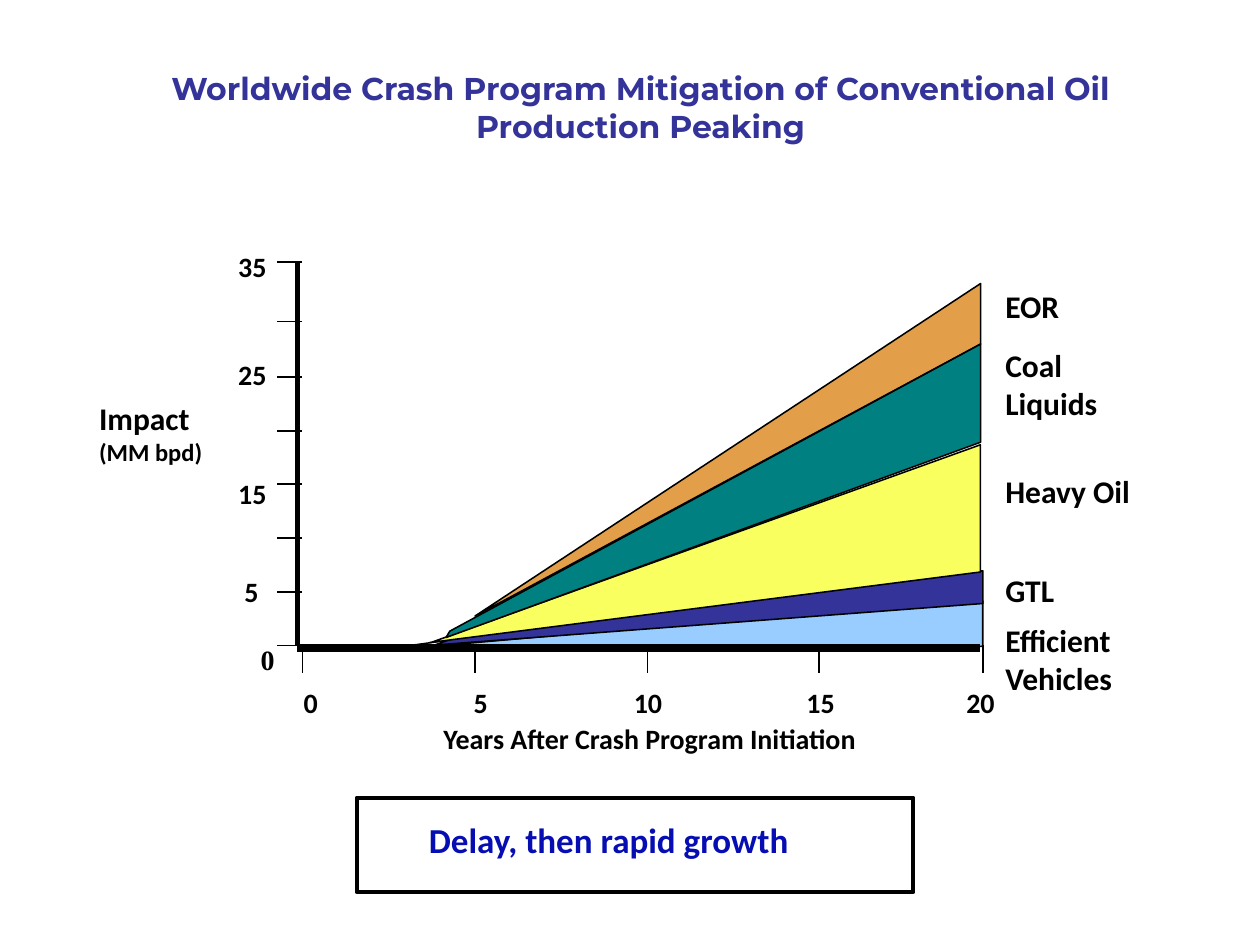
from lxml import etree
from pptx import Presentation
from pptx.dml.color import RGBColor
from pptx.enum.shapes import MSO_CONNECTOR, MSO_SHAPE
from pptx.enum.text import PP_ALIGN
from pptx.oxml.ns import qn
from pptx.util import Pt

STRAIGHT = MSO_CONNECTOR.STRAIGHT
RECTANGLE = MSO_SHAPE.RECTANGLE
LEFT, CENTER = PP_ALIGN.LEFT, PP_ALIGN.CENTER

BLACK = "000000"
THIN = 0.88

YEARS = [("0", 172.8, 173.5), ("5", 271.4, 270.7), ("10", 370, 362.2),
         ("15", 468, 460.8), ("20", 561.6, 552.2)]
IMPACT_TICKS = [368.9, 338.4, 307.4, 276.6, 246.2, 215.3, 183.6, 149.8]
IMPACT_LABELS = [("35", 136.1, 142.6), ("25", 136.1, 204.5),
                 ("15", 136.1, 272.2), ("5", 139.7, 328.3)]

VEHICLES_AREA = [(256.3, 369.4), (561.6, 369.4), (561.6, 343.4),
                 (320.4, 362.9), (247, 369.4)]
GTL_AREA = [(258.5, 365), (561.6, 326.2), (561.6, 344.9), (248.4, 368.6)]
HEAVY_OIL_AREA = [(246.2, 367.2), (560.2, 254.2), (560.2, 326.9), (245.5, 367.2)]
EOR_AREA = [(271.4, 352.1), (560.4, 162), (560.4, 196.6)]
COAL_AREA = [(254.9, 364.3), (560.4, 252.7), (560.4, 196.6), (257, 360.7)]

SERIES_LABELS = [("EOR", 160.6, 28.8), ("Coal Liquids", 194.4, 50.4),
                 ("Heavy Oil", 266.4, 50.4), ("GTL", 322.6, 28.8),
                 ("Efficient Vehicles", 351.4, 50.4)]


def color(code):
    return RGBColor.from_string(code)


def add_line(slide, start, end, width=THIN):
    line = slide.shapes.add_connector(
        STRAIGHT, *(Pt(value) for value in (*start, *end)))
    line.line.color.rgb = color(BLACK)
    line.line.width = Pt(width)
    etree.SubElement(line._element.spPr, qn("a:effectLst"))


def add_area(slide, points, fill):
    corners = [(Pt(x), Pt(y)) for x, y in points]
    builder = slide.shapes.build_freeform(*corners[0])
    builder.add_line_segments(corners[1:], close=True)
    area = builder.convert_to_shape()
    area.shadow.inherit = False
    area.fill.solid()
    area.fill.fore_color.rgb = color(fill)
    area.line.color.rgb = color(BLACK)
    area.line.width = Pt(THIN)


def add_text(slide, lines, box, font="Calibri", ink=BLACK, align=LEFT,
             inset=True, wrap=True):
    frame = slide.shapes.add_textbox(*(Pt(value) for value in box)).text_frame
    frame.word_wrap = wrap
    if not inset:
        frame.margin_left = frame.margin_right = 0
        frame.margin_top = frame.margin_bottom = 0
    for index, (text, size) in enumerate(lines):
        paragraph = frame.add_paragraph() if index else frame.paragraphs[0]
        paragraph.text = text
        paragraph.alignment = align
        paragraph.font.name = font
        paragraph.font.size = Pt(size)
        paragraph.font.bold = True
        paragraph.font.color.rgb = color(ink)


def add_axis_label(slide, text, left, top, font="Calibri"):
    add_text(slide, [(text, 16)], (left, top, 9 * len(text), 19.4), font,
             inset=False, wrap=False)


def add_frame(slide, box):
    frame = slide.shapes.add_shape(RECTANGLE, *(Pt(value) for value in box))
    frame.shadow.inherit = False
    frame.fill.background()
    frame.line.color.rgb = color(BLACK)
    frame.line.width = Pt(2.25)


def add_axes(slide):
    for year, tick, label in YEARS:
        add_line(slide, (tick, 368.6), (tick, 384.5))
        add_axis_label(slide, year, label, 391.7)
    for tick in IMPACT_TICKS:
        add_line(slide, (158.4, tick), (172.8, tick))
    for impact, left, top in IMPACT_LABELS:
        add_axis_label(slide, impact, left, top)
    add_axis_label(slide, "0", 149, 367.2, "Times New Roman")
    add_line(slide, (169.9, 368.6), (169.9, 149.8), 3)
    add_line(slide, (169.9, 370.1), (560.2, 370.1), 4.5)


def main():
    presentation = Presentation()
    presentation.slide_width, presentation.slide_height = Pt(720), Pt(540)
    slide = presentation.slides.add_slide(presentation.slide_layouts[6])

    add_area(slide, VEHICLES_AREA, "99CCFF")
    add_line(slide, (236.2, 368.6), (468, 337))
    add_area(slide, GTL_AREA, "333399")
    add_area(slide, HEAVY_OIL_AREA, "F9FF5E")
    add_area(slide, EOR_AREA, "E39E49")
    add_area(slide, COAL_AREA, "008080")
    add_axes(slide)

    for name, top, height in SERIES_LABELS:
        add_text(slide, [(name, 18)], (567.4, top, 89.3, height))
    add_text(slide, [("Impact", 18), ("(MM bpd)", 14)],
             (56.6, 228.2, 80, 48.2), inset=False)
    add_text(slide, [("Years After Crash Program Initiation", 16)],
             (214.6, 412.6, 313.2, 19.4), align=CENTER, inset=False)
    add_text(slide, [("Worldwide Crash Program Mitigation of Conventional Oil "
                      "Production Peaking", 18)],
             (48.2, 36, 635.8, 64.8), "Montserrat", "333399", CENTER)
    add_text(slide, [("Delay, then rapid growth", 20)],
             (238, 464.4, 288, 36), ink="060DB2")
    add_frame(slide, (203.8, 455.8, 318.2, 54))

    presentation.save("out.pptx")


if __name__ == "__main__":
    main()
